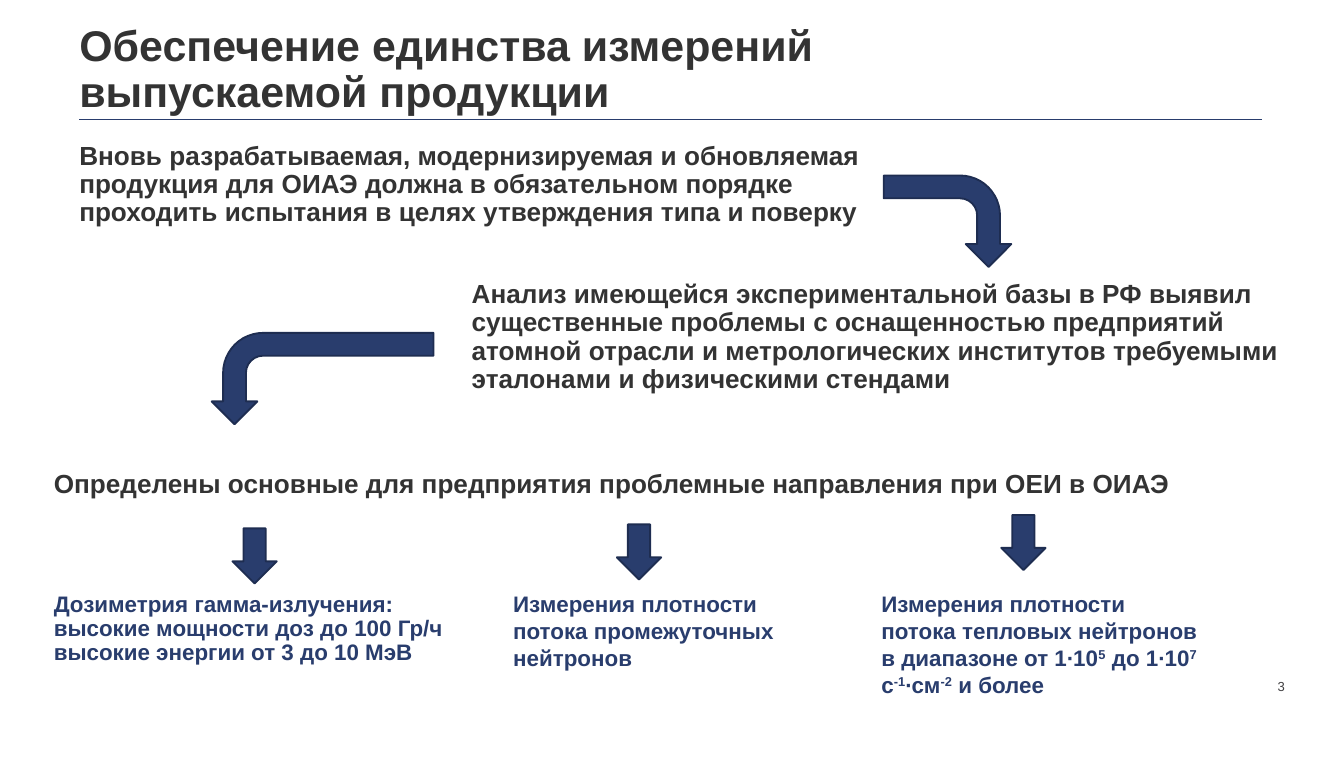
from lxml import etree
from pptx import Presentation
from pptx.dml.color import RGBColor
from pptx.enum.shapes import MSO_CONNECTOR, MSO_SHAPE
from pptx.enum.text import MSO_ANCHOR, PP_ALIGN
from pptx.oxml.ns import qn
from pptx.util import Inches, Pt

STRAIGHT = MSO_CONNECTOR.STRAIGHT
BENT_ARROW, DOWN_ARROW = MSO_SHAPE.BENT_ARROW, MSO_SHAPE.DOWN_ARROW
TOP, BOTTOM = MSO_ANCHOR.TOP, MSO_ANCHOR.BOTTOM
LEFT, RIGHT = PP_ALIGN.LEFT, PP_ALIGN.RIGHT

COLUMNS, ROWS = 100, 56.3
WIDTH, HEIGHT = Inches(10), Inches(5.63)
COLORS = {"ink": "333333", "navy": "293D6D", "edge": "1E2D51", "number": "414042"}

STYLES = {
    "title": {"size": 23, "color": "ink", "bold": True},
    "statement": {"size": 14, "color": "ink", "bold": True},
    "direction": {"size": 12, "color": "navy", "bold": True},
    "number": {"size": 7, "color": "number", "bold": False},
}

STATEMENTS = [
    ((5.9, 1.8, 71.8, 3.6), "title",
     "Обеспечение единства измерений выпускаемой продукции"),
    ((5.9, 10.6, 62.4, 6.8), "statement",
     "Вновь разрабатываемая, модернизируемая и обновляемая продукция для ОИАЭ "
     "должна в обязательном порядке проходить испытания в целях утверждения "
     "типа и поверку"),
    ((35.1, 20.9, 62.4, 11.4), "statement",
     "Анализ имеющейся экспериментальной базы в РФ выявил существенные проблемы "
     "с оснащенностью предприятий атомной отрасли и метрологических институтов "
     "требуемыми эталонами и физическими стендами"),
    ((4, 35, 84.9, 3.7), "statement",
     "Определены основные для предприятия проблемные направления при ОЕИ в ОИАЭ"),
]
DOSIMETRY = [
    ["Дозиметрия гамма-излучения:"],
    ["высокие мощности доз до 100 Гр/ч"],
    ["высокие энергии от 3 до 10 МэВ"],
]
INTERMEDIATE_NEUTRONS = [["Измерения плотности потока промежуточных нейтронов"]]
THERMAL_NEUTRONS = [[
    "Измерения плотности потока тепловых нейтронов в диапазоне от 1∙10", "5",
    " до 1∙10", "7", " с", "-1", "∙см", "-2", " и более",
]]

BENDS = [((67.1, 11.7, 6.8, 9.5), False), ((20.6, 19.9, 6.8, 16.5), True)]
FIRST_ARROW, ARROW_STEP = 17.3, 28.6
ARROW_TOPS = [39.3, 39, 38.3]


def place(left, top, width, height):
    column, row = WIDTH / COLUMNS, HEIGHT / ROWS
    return [round(share) for share in
            (left * column, top * row, width * column, height * row)]


def apply(target, values):
    for name, value in values.items():
        setattr(target, name, value)


def rgb(name):
    return RGBColor.from_string(COLORS[name])


def add_text(slide, area, style, paragraphs, spacing=0.9, inset=(0, 0),
             align=LEFT, anchor=TOP):
    frame = slide.shapes.add_textbox(*place(*area)).text_frame
    side, edge = Inches(inset[0]), Inches(inset[1])
    apply(frame, {"word_wrap": True, "vertical_anchor": anchor,
                  "margin_left": side, "margin_right": side,
                  "margin_top": edge, "margin_bottom": edge})
    look = STYLES[style]
    for index, parts in enumerate(paragraphs):
        paragraph = frame.add_paragraph() if index else frame.paragraphs[0]
        apply(paragraph, {"line_spacing": spacing, "alignment": align})
        for position, part in enumerate(parts):
            run = paragraph.add_run()
            run.text = part
            apply(run.font, {"name": "Arial", "size": Pt(look["size"]),
                             "bold": look["bold"]})
            run.font.color.rgb = rgb(look["color"])
            if position % 2:
                run.font._element.set("baseline", "30000")


def add_arrow(slide, kind, area, rotation=0, flipped=False):
    arrow = slide.shapes.add_shape(kind, *place(*area))
    arrow.rotation = rotation
    arrow.shadow.inherit = False
    arrow.fill.solid()
    arrow.fill.fore_color.rgb = rgb("navy")
    arrow.line.color.rgb = rgb("edge")
    arrow.line.width = Pt(1)
    if flipped:
        arrow.element.spPr.find(qn("a:xfrm")).set("flipV", "1")


def add_title_rule(slide):
    left, top, length, _ = place(5.9, 8.9, 88, 0)
    rule = slide.shapes.add_connector(STRAIGHT, left, top, left + length, top)
    rule.line.color.rgb = rgb("navy")
    rule.line.width = Pt(0.5)
    etree.SubElement(rule.element.spPr, qn("a:effectLst"))


def main():
    deck = Presentation()
    apply(deck, {"slide_width": WIDTH, "slide_height": HEIGHT})
    slide = deck.slides.add_slide(deck.slide_layouts[6])

    add_text(slide, (89.5, 50.1, 6.1, 1.5), "number", [["3"]],
             spacing=1, align=RIGHT, anchor=BOTTOM)
    add_title_rule(slide)
    for area, style, statement in STATEMENTS:
        add_text(slide, area, style, [[statement]])
    for area, flipped in BENDS:
        add_arrow(slide, BENT_ARROW, area, 90, flipped)

    add_text(slide, (4, 44.1, 36.2, 7.3), "direction", DOSIMETRY)
    for left, height, direction in ((37.2, 7.1, INTERMEDIATE_NEUTRONS),
                                    (64.6, 9.1, THERMAL_NEUTRONS)):
        add_text(slide, (left, 43.4, 25.7, height), "direction", direction,
                 spacing=1, inset=(0.1, 0.05))
    for index, top in enumerate(ARROW_TOPS):
        add_arrow(slide, DOWN_ARROW,
                  (FIRST_ARROW + index * ARROW_STEP, top, 3.3, 4.1))

    deck.save("out.pptx")


if __name__ == "__main__":
    main()
